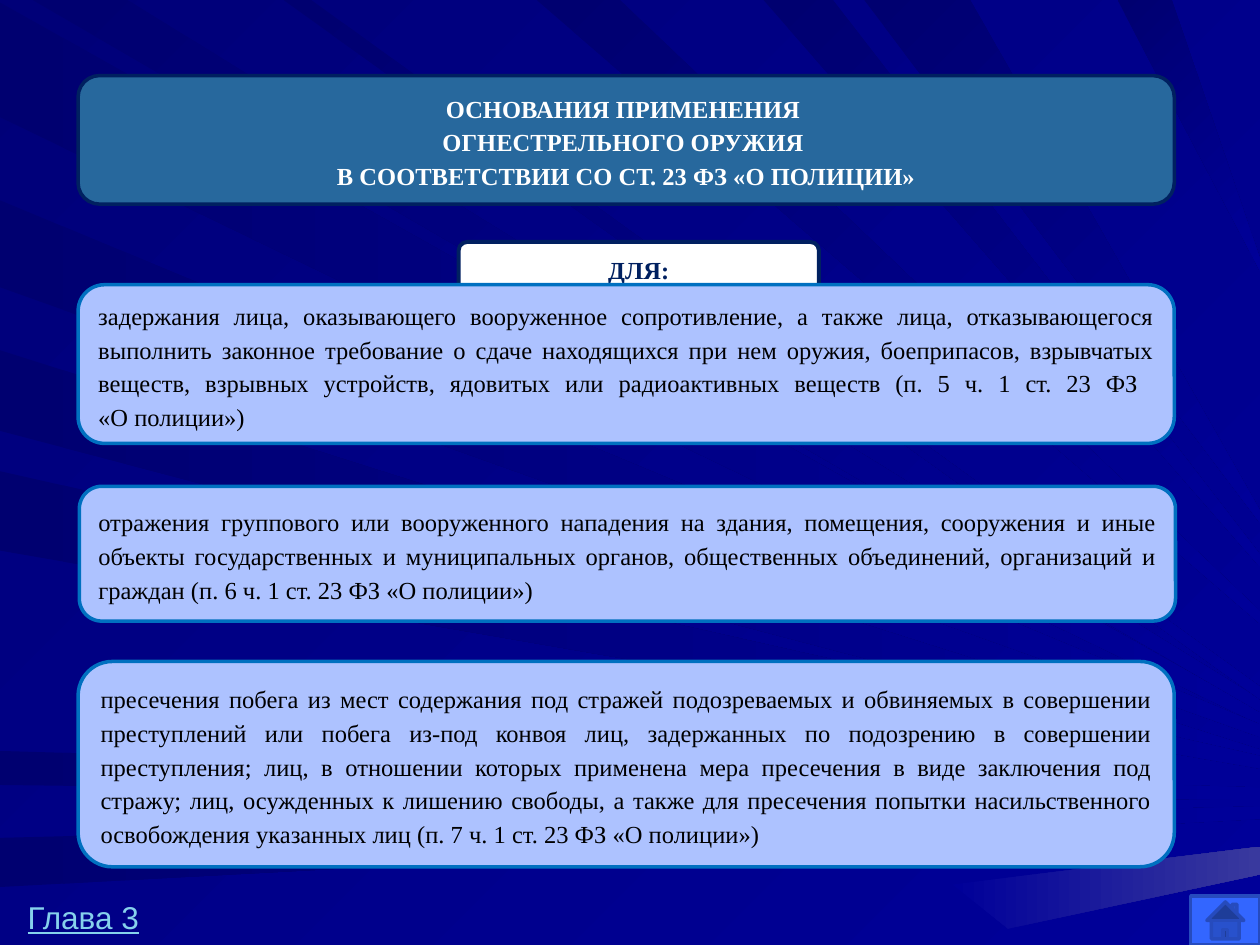
from pptx import Presentation
from pptx.dml.color import RGBColor
from pptx.enum.shapes import MSO_SHAPE
from pptx.enum.text import MSO_ANCHOR, MSO_AUTO_SIZE, PP_ALIGN
from pptx.util import Inches, Pt

ROUNDED = MSO_SHAPE.ROUNDED_RECTANGLE
HOME_BUTTON = MSO_SHAPE.ACTION_BUTTON_HOME
MIDDLE = MSO_ANCHOR.MIDDLE
FIT_SHAPE = MSO_AUTO_SIZE.SHAPE_TO_FIT_TEXT
CENTER = PP_ALIGN.CENTER
JUSTIFY = PP_ALIGN.JUSTIFY

WHITE = RGBColor.from_string("FFFFFF")
BLACK = RGBColor.from_string("000000")
NAVY = RGBColor.from_string("002060")
STEEL = RGBColor.from_string("27689D")
PALE = RGBColor.from_string("ADC2FF")
BORDER = RGBColor.from_string("0070C0")
BUTTON = RGBColor.from_string("3366FF")
BUTTON_EDGE = RGBColor.from_string("264BBD")
LINK = RGBColor.from_string("86D1EC")
GLOW = RGBColor.from_string("39399E")
SHADE = RGBColor.from_string("000070")
DEEP = RGBColor.from_string("000078")
BRIGHT = RGBColor.from_string("000099")

SERIF = "Times New Roman"
SANS = "Arial"
PAGE_WIDTH = 10
RAY_TIP = 0.05
PANEL_WIDTH = 8.7

LEFT_RAYS = [
    (0.02, 0.93, 5.7),
    (1.59, 2.28, 5.8),
    (2.78, 3.42, 6),
    (3.74, 4.37, 6.05),
    (5.96, 6.23, 6.3),
    (6.65, 7.04, 6.45),
]
TOP_RAYS = [
    (0.26, 1.01, 5.6),
    (2.25, 2.47, 5.5),
    (4.26, 4.92, 4.9),
    (6.06, 6.61, 4.45),
    (6.86, 7.7, 4.1),
    (8.87, 9.3, 2.1),
]
GLEAM = [(7.56, 7.02), (PAGE_WIDTH, 6.72), (PAGE_WIDTH, 6.94), (8, 7.37)]

TITLE = [
    "ОСНОВАНИЯ ПРИМЕНЕНИЯ ",
    "ОГНЕСТРЕЛЬНОГО ОРУЖИЯ ",
    "В СООТВЕТСТВИИ СО СТ. 23 ФЗ «О ПОЛИЦИИ»",
]
GROUNDS = [
    (0.62, 2.26, 1.26,
     "задержания лица, оказывающего вооруженное сопротивление, а также лица, "
     "отказывающегося выполнить законное требование о сдаче находящихся при нем оружия, "
     "боеприпасов, взрывчатых веществ, взрывных устройств, ядовитых или радиоактивных "
     "веществ (п. 5 ч. 1 ст. 23 ФЗ \v«О полиции»)"),
    (0.63, 3.86, 1.07,
     "отражения группового или вооруженного нападения на здания, помещения, сооружения "
     "и иные объекты государственных и муниципальных органов, общественных объединений, "
     "организаций и граждан (п. 6 ч. 1 ст. 23 ФЗ «О полиции»)"),
    (0.62, 5.25, 1.63,
     "пресечения побега из мест содержания под стражей подозреваемых и обвиняемых "
     "в совершении преступлений или побега из-под конвоя лиц, задержанных по подозрению "
     "в совершении преступления; лиц, в отношении которых применена мера пресечения в виде "
     "заключения под стражу; лиц, осужденных к лишению свободы, а также для пресечения "
     "попытки насильственного освобождения указанных лиц (п. 7 ч. 1 ст. 23 ФЗ «О полиции»)"),
]


def paint(fill, start, end, angle):
    fill.gradient()
    fill.gradient_angle = -angle % 360
    for stop, color, position in zip(fill.gradient_stops, (start, end), (0, 1)):
        stop.color.rgb = color
        stop.position = position


def add_outline(page, points, start, end, angle):
    corners = [(Inches(x), Inches(y)) for x, y in points]
    builder = page.shapes.build_freeform(*corners[0])
    builder.add_line_segments(corners[1:], close=True)
    outline = builder.convert_to_shape()
    outline.shadow.inherit = False
    outline.line.fill.background()
    paint(outline.fill, start, end, angle)


def add_rays(page):
    for upper, lower, tip in LEFT_RAYS:
        base = [(0, lower), (0, upper)]
        add_outline(page, base + ray_tip(tip), SHADE, BRIGHT, 0)
    for near, far, tip in TOP_RAYS:
        base = [(near, 0), (far, 0)]
        add_outline(page, base + ray_tip(tip), SHADE, BRIGHT, 45)
    add_outline(page, GLEAM, BRIGHT, GLOW, 0)


def ray_tip(level):
    return [(PAGE_WIDTH, level - RAY_TIP), (PAGE_WIDTH, level + RAY_TIP)]


def add_panel(page, kind, frame, fill, edge, width=2):
    panel = page.shapes.add_shape(kind, *map(Inches, frame))
    panel.shadow.inherit = False
    panel.fill.solid()
    panel.fill.fore_color.rgb = fill
    panel.line.color.rgb = edge
    panel.line.width = Pt(width)
    return panel


def style(font, name, size, color):
    font.name = name
    font.size = Pt(size)
    font.color.rgb = color


def write(box, lines, color, align, bold=False):
    frame = box.text_frame
    frame.word_wrap = True
    frame.vertical_anchor = MIDDLE
    frame.text = "\n".join(lines)
    for para in frame.paragraphs:
        para.alignment = align
        para.line_spacing = 1.15
        for span in para.runs:
            style(span.font, SERIF, 14, color)
            span.font.bold = bold


def add_chapter_link(page):
    box = page.shapes.add_textbox(Inches(0.12), Inches(7.08), Inches(1.09), Inches(0.4))
    frame = box.text_frame
    frame.word_wrap = False
    frame.auto_size = FIT_SHAPE
    frame.text = "Глава 3"
    font = frame.paragraphs[0].runs[0].font
    style(font, SANS, 18, LINK)
    font.underline = True


def main():
    deck = Presentation()
    deck.slide_width = Inches(PAGE_WIDTH)
    deck.slide_height = Inches(7.5)
    page = deck.slides.add_slide(deck.slide_layouts[6])
    paint(page.background.fill, DEEP, BRIGHT, 45)
    add_rays(page)
    add_panel(page, HOME_BUTTON, (9.45, 7.11, 0.55, 0.39), BUTTON, BUTTON_EDGE)
    title = add_panel(page, ROUNDED, (0.62, 0.6, PANEL_WIDTH, 1.02), STEEL, NAVY)
    write(title, TITLE, WHITE, CENTER, bold=True)
    purpose = add_panel(page, ROUNDED, (3.64, 1.92, 2.86, 0.41), WHITE, NAVY, 2.25)
    write(purpose, ["ДЛЯ:"], NAVY, CENTER, bold=True)
    for left, top, height, text in GROUNDS:
        ground = add_panel(page, ROUNDED, (left, top, PANEL_WIDTH, height), PALE, BORDER)
        write(ground, [text], BLACK, JUSTIFY)
    add_chapter_link(page)
    deck.save("out.pptx")


if __name__ == "__main__":
    main()
